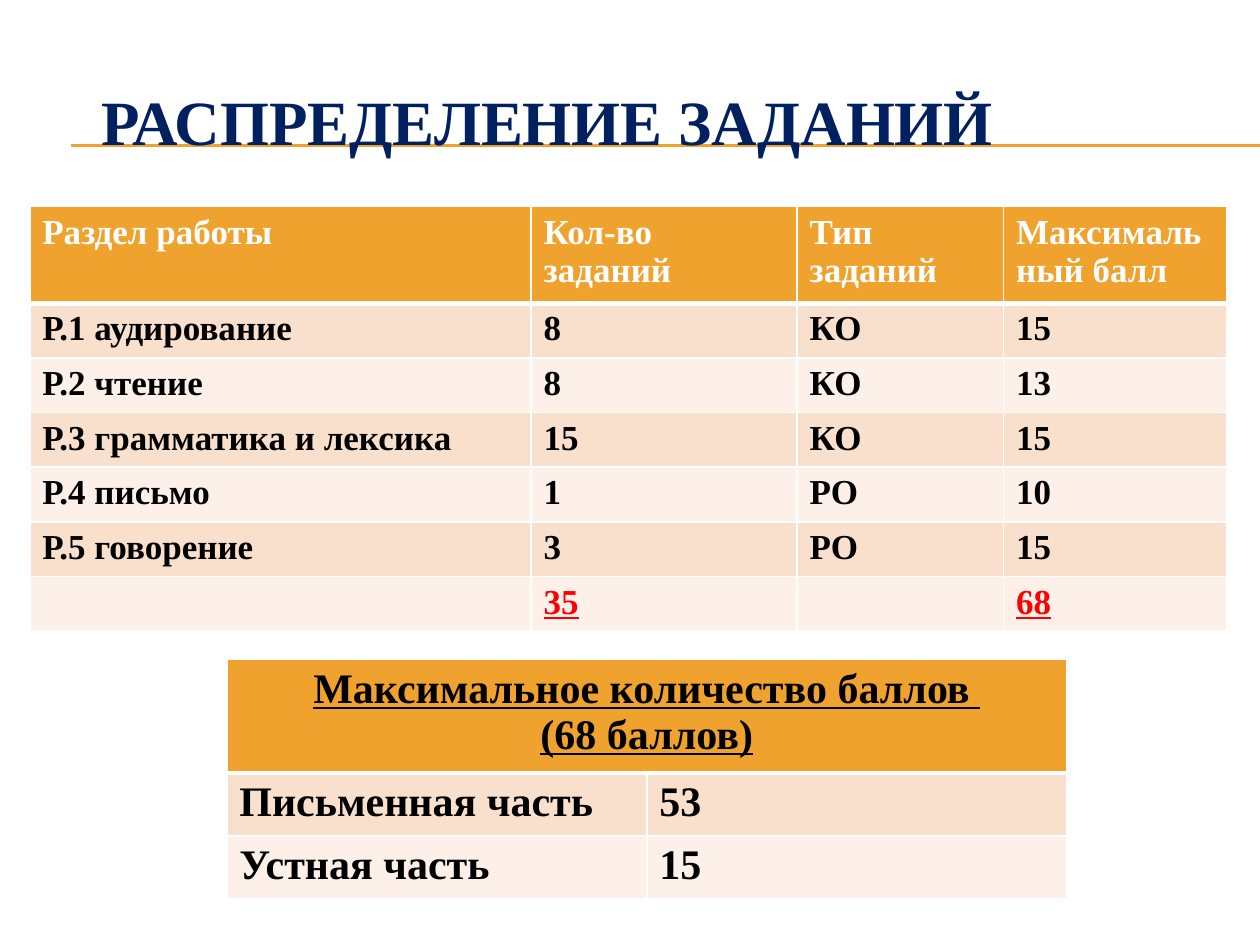
from lxml import etree
from pptx import Presentation
from pptx.dml.color import RGBColor
from pptx.enum import shapes, text
from pptx.oxml import ns
from pptx.util import Pt


class Theme:
    font = "Times New Roman"
    accent, navy, red = "F0A22E", "002060", "FF0000"
    white, black = "FFFFFF", "000000"
    bands = ("F9E0CD", "FCF0E8")
    title_size, score_size, summary_size = 36, 20, 24


TITLE = "РАСПРЕДЕЛЕНИЕ ЗАДАНИЙ"
SECTIONS = [
    ("Раздел работы", "Кол-во заданий", "Тип заданий", "Максимальный балл"),
    ("Р.1 аудирование", "8", "КО", "15"),
    ("Р.2 чтение", "8", "КО", "13"),
    ("Р.3 грамматика и лексика", "15", "КО", "15"),
    ("Р.4 письмо", "1", "РО", "10"),
    ("Р.5 говорение", "3", "РО", "15"),
    ("", "35", "", "68"),
]
SUMMARY = [
    ("Максимальное количество баллов \n(68 баллов)", ""),
    ("Письменная часть", "53"),
    ("Устная часть", "15"),
]


def style_text(frame, size, color, underline=False, align=None):
    for paragraph in frame.paragraphs:
        paragraph.alignment = align
        for run in paragraph.runs:
            font = run.font
            font.name, font.size, font.bold = Theme.font, Pt(size), True
            font.underline = underline or None
            font.color.rgb = RGBColor.from_string(color)


def add_borders(cell, bottom):
    """Draw 1 pt white borders, with the given width in points below."""
    properties = cell._tc.get_or_add_tcPr()
    for side, width in (("L", 1), ("R", 1), ("T", 1), ("B", bottom)):
        line = etree.SubElement(properties, ns.qn(f"a:ln{side}"), w=str(Pt(width)))
        fill = etree.SubElement(line, ns.qn("a:solidFill"))
        etree.SubElement(fill, ns.qn("a:srgbClr"), val=Theme.white)


def add_table(slide, rows, left, top, widths, header_height, row_height, size):
    heights = [header_height] + [row_height] * (len(rows) - 1)
    table = slide.shapes.add_table(
        len(rows), len(widths), Pt(left), Pt(top), Pt(sum(widths)), Pt(sum(heights))
    ).table
    for column, width in zip(table.columns, widths):
        column.width = Pt(width)
    for index, (values, height) in enumerate(zip(rows, heights)):
        table.rows[index].height = Pt(height)
        fill = Theme.bands[(index - 1) % 2] if index else Theme.accent
        for cell, value in zip(table.rows[index].cells, values):
            add_borders(cell, bottom=1 if index else 3)
            cell.fill.solid()
            cell.fill.fore_color.rgb = RGBColor.from_string(fill)
            cell.text_frame.text = value
            style_text(cell.text_frame, size, Theme.black if index else Theme.white)
    return table


def add_rule(slide, y):
    rule = slide.shapes.add_connector(
        shapes.MSO_CONNECTOR.STRAIGHT, Pt(40.5), Pt(y), Pt(720), Pt(y)
    )
    rule.line.color.rgb = RGBColor.from_string(Theme.accent)
    rule.line.width = Pt(0.75)
    etree.SubElement(rule._element.spPr, ns.qn("a:effectLst"))


def main():
    presentation = Presentation()
    presentation.slide_width, presentation.slide_height = Pt(720), Pt(540)
    slide = presentation.slides.add_slide(presentation.slide_layouts[6])

    for y in (82.8, 83.4):
        add_rule(slide, y)

    title = slide.shapes.add_textbox(Pt(24), Pt(36), Pt(578), Pt(66)).text_frame
    title.word_wrap = True
    title.vertical_anchor = text.MSO_ANCHOR.MIDDLE
    title.text = TITLE
    style_text(title, Theme.title_size, Theme.navy, align=text.PP_ALIGN.CENTER)

    sections = add_table(slide, SECTIONS, 17, 118, (286.5, 152, 118, 127.5),
                         51.5, 29.4, Theme.score_size)
    for cell in sections.rows[len(SECTIONS) - 1].cells:
        style_text(cell.text_frame, Theme.score_size, Theme.red, underline=True)

    summary = add_table(slide, SUMMARY, 129.6, 376.8, (240, 240),
                        60.5, 33.4, Theme.summary_size)
    heading = summary.cell(0, 0)
    heading.merge(summary.cell(0, 1))
    style_text(heading.text_frame, Theme.summary_size, Theme.black,
               underline=True, align=text.PP_ALIGN.CENTER)

    presentation.save("out.pptx")


if __name__ == "__main__":
    main()
